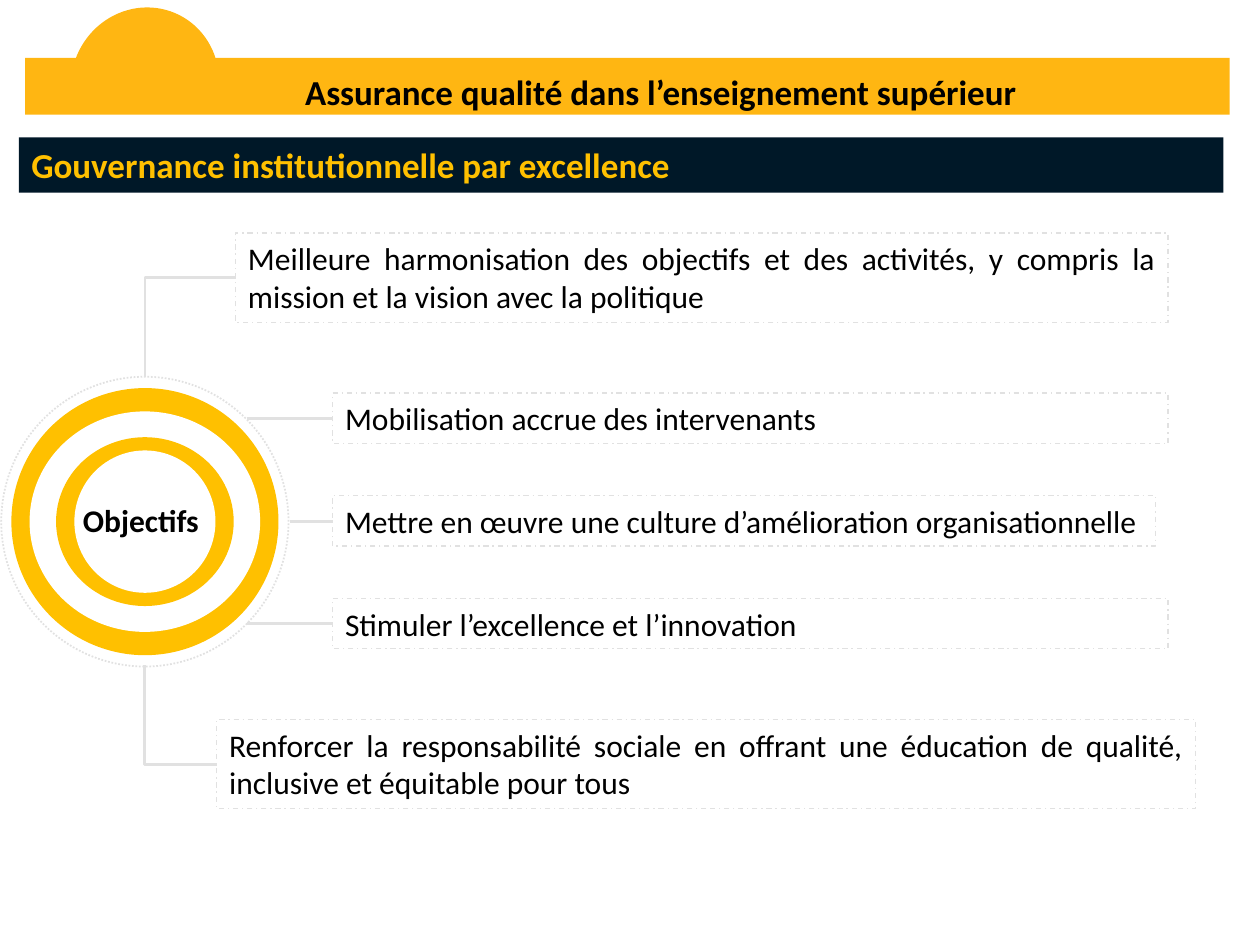
from lxml.etree import SubElement
from pptx import Presentation
from pptx.dml.color import RGBColor
from pptx.enum.dml import MSO_LINE
from pptx.enum.shapes import MSO_CONNECTOR as LINK, MSO_SHAPE as SHAPE
from pptx.enum.text import MSO_ANCHOR as ANCHOR, PP_ALIGN as ALIGN
from pptx.oxml.ns import qn
from pptx.util import Inches, Pt

WIDTH, HEIGHT = Inches(10), Inches(7.5)
COL, ROW = WIDTH / 100, HEIGHT / 75

ORANGE = RGBColor(0xFF, 0xB6, 0x12)
GOLD = RGBColor(0xFF, 0xC0, 0x00)
NAVY = RGBColor(0x00, 0x18, 0x28)
GREY = RGBColor(0xE1, 0xE1, 0xE1)
WHITE = RGBColor(0xFF, 0xFF, 0xFF)
BLACK = RGBColor(0x00, 0x00, 0x00)

HUB_X, HUB_Y = 11.5, 41.4
HUB_TOP, HUB_BOTTOM = 29.9, 52.8
RINGS = [(21.2, 21.2, GOLD), (18.3, 17.5, WHITE), (14.1, 13.4, GOLD), (11.2, 11.3, WHITE)]

GOALS = [
    (18.7, 22.05, 74, 7.1, "Meilleure harmonisation des objectifs et des activités, "
     "y compris la mission et la vision avec la politique"),
    (26.4, 33.2, 66.3, 4, "Mobilisation accrue des intervenants"),
    (26.4, 41.35, 65.3, 4, "Mettre en œuvre une culture d’amélioration organisationnelle"),
    (26.4, 49.5, 66.3, 4, "Stimuler l’excellence et l’innovation"),
    (17.2, 60.65, 77.7, 7.1, "Renforcer la responsabilité sociale en offrant une éducation "
     "de qualité, inclusive et équitable pour tous"),
]
LINKS = [
    (18.7, 22, HUB_X, HUB_TOP, LINK.ELBOW),
    (19.6, 33.2, 26.4, 33.2, LINK.STRAIGHT),
    (23, 41.4, 26.4, 41.4, LINK.STRAIGHT),
    (19.6, 49.5, 26.4, 49.5, LINK.STRAIGHT),
    (17.2, 60.7, HUB_X, HUB_BOTTOM, LINK.ELBOW),
]


def place(x, y, w, h):
    return round(x * COL), round(y * ROW), round(w * COL), round(h * ROW)


def add_shape(s, kind, x, y, w, h, fill=None, line=None, dash=None):
    sp = s.shapes.add_shape(kind, *place(x, y, w, h))
    sp.shadow.inherit = False
    if fill is None:
        sp.fill.background()
    else:
        sp.fill.solid()
        sp.fill.fore_color.rgb = fill
    if line is None:
        sp.line.fill.background()
    else:
        sp.line.color.rgb = GREY
        sp.line.width = Pt(line)
        sp.line.dash_style = dash
    return sp


def add_centred(s, kind, x, y, w, h, **style):
    return add_shape(s, kind, x - w / 2, y - h / 2, w, h, **style)


def write(sp, text, size, color=BLACK, bold=False, align=ALIGN.LEFT):
    tf = sp.text_frame
    tf.word_wrap = True
    tf.vertical_anchor = ANCHOR.TOP
    p = tf.paragraphs[0]
    p.text = text
    p.alignment = align
    p.font.name = "Calibri"
    p.font.size = Pt(size)
    p.font.bold = bold
    p.font.color.rgb = color


def add_label(s, x, y, w, h, text, size, align):
    sp = s.shapes.add_textbox(*place(x, y, w, h))
    write(sp, text, size, bold=True, align=align)


def add_link(s, x1, y1, x2, y2, kind):
    link = s.shapes.add_connector(kind, *place(x1, y1, x2, y2))
    link.line.color.rgb = GREY
    link.line.width = Pt(1.5)
    props = link._element.spPr
    SubElement(props, qn("a:effectLst"))
    if kind == LINK.ELBOW:
        props.find(qn("a:prstGeom")).set("prst", "bentConnector2")


def add_header(s):
    add_shape(s, SHAPE.RECTANGLE, 2, 4.6, 95.6, 4.5, fill=ORANGE)
    add_shape(s, SHAPE.CHORD, 5.4, 0.8, 12.2, 11.7, fill=ORANGE).rotation = 112.9
    add_label(s, 21.9, 5.1, 61.1, 4.4,
              "Assurance qualité dans l’enseignement supérieur", 20, ALIGN.CENTER)
    band = add_shape(s, SHAPE.RECTANGLE, 1.5, 10.9, 95.6, 4.4, fill=NAVY)
    write(band, "Gouvernance institutionnelle par excellence", 20, GOLD, bold=True)


def add_goals(s):
    for x, y, w, h, text in GOALS:
        box = add_shape(s, SHAPE.RECTANGLE, x, y - h / 2, w, h,
                        line=0.75, dash=MSO_LINE.DASH_DOT)
        write(box, text, 18, align=ALIGN.JUSTIFY)


def add_hub(s):
    for w, h, color in RINGS:
        add_centred(s, SHAPE.OVAL, HUB_X, HUB_Y, w, h, fill=color)
    add_label(s, 5.6, 39.3, 12, 4, "Objectifs", 18, ALIGN.JUSTIFY)
    add_centred(s, SHAPE.OVAL, HUB_X, HUB_Y, 22.8, 23, line=1, dash=MSO_LINE.ROUND_DOT)


def main():
    prs = Presentation()
    prs.slide_width, prs.slide_height = WIDTH, HEIGHT
    s = prs.slides.add_slide(prs.slide_layouts[6])
    add_header(s)
    add_goals(s)
    add_hub(s)
    for link in LINKS:
        add_link(s, *link)
    prs.save("out.pptx")


if __name__ == "__main__":
    main()
